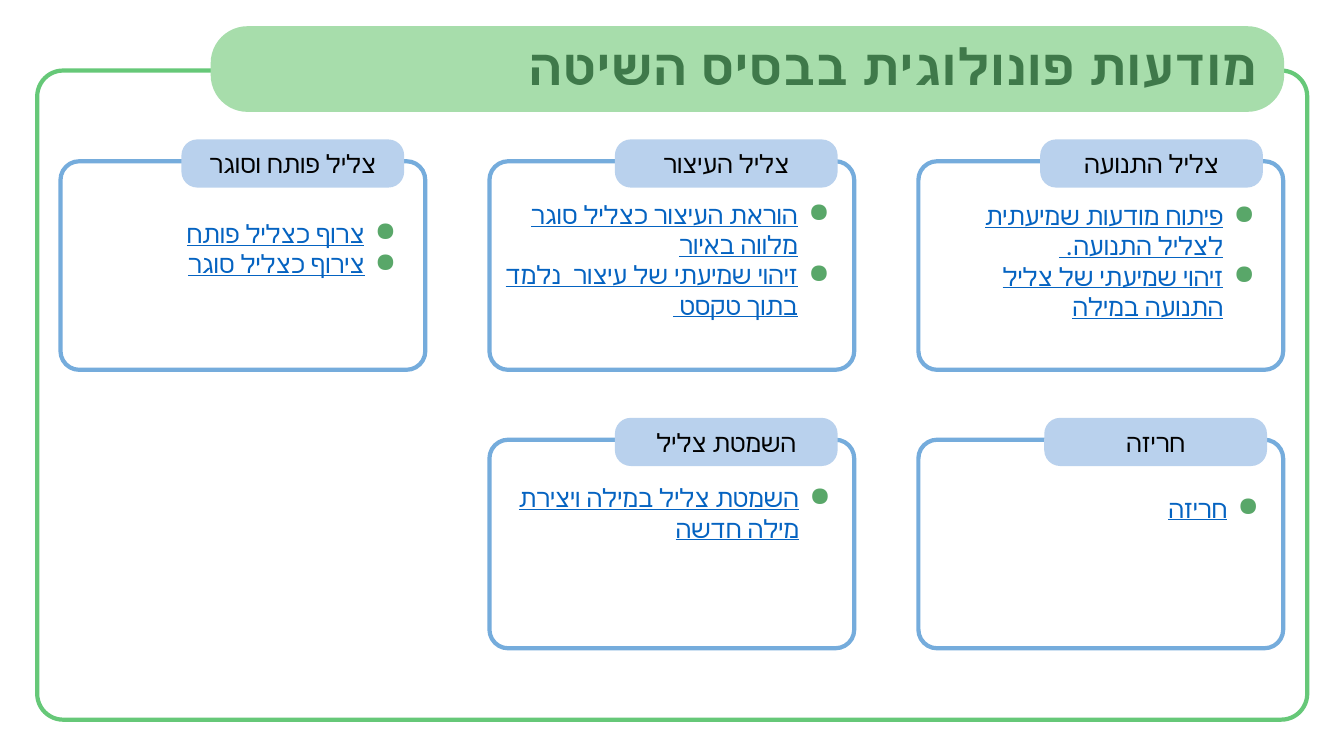
from dataclasses import dataclass

from lxml import etree
from pptx import Presentation
from pptx.dml.color import RGBColor
from pptx.enum.shapes import MSO_SHAPE
from pptx.enum.text import MSO_ANCHOR, PP_ALIGN
from pptx.oxml.ns import qn
from pptx.util import Pt

ROUNDED = MSO_SHAPE.ROUNDED_RECTANGLE
MIDDLE = MSO_ANCHOR.MIDDLE
CENTER, RIGHT = PP_ALIGN.CENTER, PP_ALIGN.RIGHT

FRAME_GREEN = RGBColor(0x66, 0xC8, 0x78)
BANNER_GREEN = RGBColor(0xA7, 0xDD, 0xAB)
TITLE_GREEN = RGBColor(0x3F, 0x79, 0x4A)
BULLET_GREEN = RGBColor(0x59, 0xA7, 0x69)
CARD_BLUE = RGBColor(0x75, 0xAC, 0xDC)
TAB_BLUE = RGBColor(0xB9, 0xD1, 0xED)
TOPIC_BLUE = RGBColor(0x05, 0x63, 0xC1)
BLACK = RGBColor(0, 0, 0)

FONT = "League Spartan"
BULLET_INDENT = Pt(22.5)

# Card grid: left and top of the first card, then the steps
CARD_LEFT, CARD_TOP = 43.2, 115.2
CARD_STEP_X, CARD_STEP_Y = 306.4, 198.9
CARD_WIDTH, CARD_HEIGHT = 260.6, 149
TAB_WIDTH, TAB_HEIGHT, TAB_RISE = 159.1, 34.4, 15.6


@dataclass
class Box:
    left: float
    top: float
    width: float
    height: float

    def lengths(self):
        return Pt(self.left), Pt(self.top), Pt(self.width), Pt(self.height)


@dataclass
class Card:
    column: int
    row: int
    heading: str
    tab_left: float
    topics_box: Box
    topics: list[str]


CARDS = [
    Card(2, 0, "צליל התנועה", 743, Box(655.9, 139.7, 246.2, 111.6),
         ["פיתוח מודעות שמיעתית לצליל התנועה. ",
          "זיהוי שמיעתי של צליל התנועה במילה"]),
    Card(1, 0, "צליל העיצור", 439.2, Box(349.2, 138.7, 249.1, 116.6),
         ["הוראת העיצור כצליל סוגר מלווה באיור",
          "זיהוי שמיעתי של עיצור  נלמד בתוך טקסט "]),
    Card(0, 0, "צליל פותח וסוגר", 129.6, Box(69.1, 152.4, 219.6, 72.7),
         ["צרוף כצליל פותח", "צירוף כצליל סוגר"]),
    Card(2, 1, "חריזה", 745.9, Box(732.2, 348.5, 172.8, 28.8),
         ["חריזה"]),
    Card(1, 1, "השמטת צליל", 439.2, Box(359.3, 341.3, 239.8, 51.1),
         ["השמטת צליל במילה ויצירת מילה חדשה"]),
]


def add_rounded(shapes, box: Box, corner: float,
                fill: RGBColor | None = None, line: RGBColor | None = None):
    panel = shapes.add_shape(ROUNDED, *box.lengths())
    panel.adjustments[0] = corner
    panel.shadow.inherit = False
    if fill is None:
        panel.fill.background()
    else:
        panel.fill.solid()
        panel.fill.fore_color.rgb = fill
    if line is None:
        panel.line.fill.background()
    else:
        panel.line.color.rgb = line
        panel.line.width = Pt(3)
    return panel


def add_text_frame(shapes, box: Box):
    frame = shapes.add_textbox(*box.lengths()).text_frame
    frame.word_wrap = True
    return frame


def set_bullet(paragraph) -> None:
    properties = paragraph._p.get_or_add_pPr()
    properties.set("marL", str(BULLET_INDENT))
    properties.set("indent", str(-BULLET_INDENT))
    bullet_color = etree.SubElement(properties, qn("a:buClr"))
    etree.SubElement(bullet_color, qn("a:srgbClr"), val=str(BULLET_GREEN))
    etree.SubElement(properties, qn("a:buSzPct"), val="107000")
    etree.SubElement(properties, qn("a:buChar"), char="●")


def write_hebrew(paragraph, text: str, size: float, color: RGBColor,
                 align: PP_ALIGN, bold: bool = False,
                 underline: bool = False) -> None:
    paragraph.text = text
    paragraph.alignment = align
    properties = paragraph._p.get_or_add_pPr()
    properties.set("rtl", "1")
    font = paragraph.font
    font.name = FONT
    font.size = Pt(size)
    font.bold = bold
    font.underline = underline
    font.color.rgb = color
    # Hebrew takes its typeface from the complex-script slot
    etree.SubElement(properties.find(qn("a:defRPr")), qn("a:cs"), typeface=FONT)


def add_card(shapes, card: Card) -> None:
    left = CARD_LEFT + card.column * CARD_STEP_X
    top = CARD_TOP + card.row * CARD_STEP_Y
    add_rounded(shapes, Box(left, top, CARD_WIDTH, CARD_HEIGHT), 0.09, line=CARD_BLUE)

    # Bulleted topics
    topics_frame = add_text_frame(shapes, card.topics_box)
    topics_frame.margin_right = Pt(5.8)
    for index, topic in enumerate(card.topics):
        paragraph = (topics_frame.add_paragraph() if index
                     else topics_frame.paragraphs[0])
        set_bullet(paragraph)
        write_hebrew(paragraph, topic, 18, TOPIC_BLUE, RIGHT, underline=True)

    # Heading tab
    tab_box = Box(card.tab_left, top - TAB_RISE, TAB_WIDTH, TAB_HEIGHT)
    tab_frame = add_rounded(shapes, tab_box, 0.33, fill=TAB_BLUE).text_frame
    tab_frame.vertical_anchor = MIDDLE
    write_hebrew(tab_frame.paragraphs[0], card.heading, 18, BLACK, CENTER)


def main() -> None:
    presentation = Presentation()
    presentation.slide_width = Pt(960)
    presentation.slide_height = Pt(540)
    shapes = presentation.slides.add_slide(presentation.slide_layouts[6]).shapes

    # Page frame and title banner
    add_rounded(shapes, Box(26.6, 50.4, 907.2, 463.7), 0.04, line=FRAME_GREEN)
    add_rounded(shapes, Box(150.5, 18.7, 766.8, 61.2), 0.43, fill=BANNER_GREEN)
    title_frame = add_text_frame(shapes, Box(15.8, 21.6, 889.2, 51.1))
    write_hebrew(title_frame.paragraphs[0], "מודעות פונולוגית בבסיס השיטה",
                 36, TITLE_GREEN, RIGHT, bold=True)

    # Topic cards
    for card in CARDS:
        add_card(shapes, card)

    presentation.save("out.pptx")


if __name__ == "__main__":
    main()
